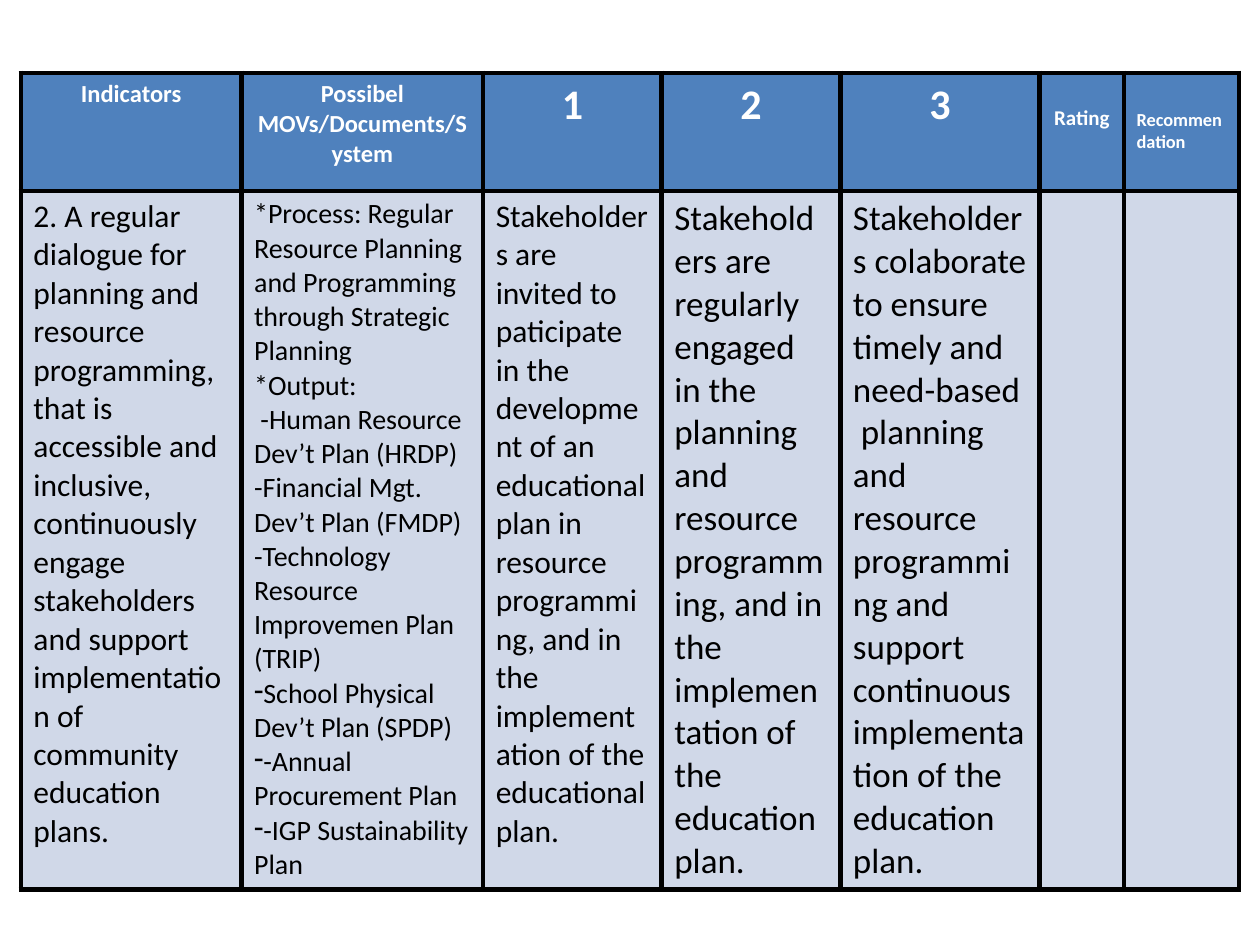
"""Build a slide with the assessment table on planning and resource programming."""
from lxml import etree
from pptx import Presentation
from pptx.dml.color import RGBColor
from pptx.enum.text import PP_ALIGN
from pptx.oxml.ns import qn
from pptx.util import Cm, Pt

LEFT, CENTER = PP_ALIGN.LEFT, PP_ALIGN.CENTER
BLACK = RGBColor(0x00, 0x00, 0x00)
WHITE = RGBColor(0xFF, 0xFF, 0xFF)
BLUE = RGBColor(0x4F, 0x81, 0xBD)
PALE_BLUE = RGBColor(0xD0, 0xD8, 0xE8)

COLUMN_WIDTHS = [4.45, 4.87, 3.6, 3.6, 4.02, 1.7, 2.32]
ROW_HEIGHTS = [2.38, 14.05]

HEADERS = [
    ("Indicators", {"size": 14}),
    ("Possibel MOVs/Documents/System", {"size": 14}),
    ("1", {"size": 24}),
    ("2", {"size": 24}),
    ("3", {"size": 24}),
    ("Rating", {"size": 12, "top": 0.65}),
    ("Recommendation", {"size": 10.5, "top": 0.73, "align": LEFT}),
]

EVIDENCE = [
    "*Process: Regular Resource Planning  and Programming through Strategic Planning",
    "*Output:",
    " -Human Resource Dev’t Plan (HRDP)",
    "-Financial Mgt. Dev’t Plan (FMDP)",
    "-Technology Resource  Improvemen Plan (TRIP)",
]
DASHED_EVIDENCE = [
    "School Physical Dev’t Plan (SPDP)",
    "-Annual Procurement Plan",
    "-IGP Sustainability Plan",
]

DETAILS = [
    (["2. A regular dialogue for planning and resource programming, that is "
      "accessible and inclusive, continuously engage stakeholders  and support "
      "implementation of community education plans."], 18),
    (EVIDENCE, 16),
    (["Stakeholders are invited to paticipate in the development of an "
      "educational plan in resource programming, and in the implementation of "
      "the educational plan."], 18),
    (["Stakeholders are regularly engaged in the planning and resource "
      "programming, and in the implementation of the education plan."], 20),
    (["Stakeholders colaborate to ensure timely and need-based  planning and "
      "resource programming and support continuous implementation of the "
      "education plan."], 20),
    ([], 18),
    ([], 18),
]


def write_text(para, text, size=18, color=BLACK, bold=False, align=LEFT,
               bullet=None, font="Calibri"):
    """Write one formatted span into a paragraph."""
    para.alignment = align
    span = para.add_run()
    span.text = text
    span.font.name = font
    span.font.size = Pt(size)
    span.font.bold = bold
    span.font.color.rgb = color
    if bullet:
        properties = para._p.get_or_add_pPr()
        properties.set("marL", "0")
        properties.set("indent", "0")
        etree.SubElement(properties, qn("a:buChar"), char=bullet)


class Page:
    """Hold the table style and the current slide."""

    border_color = BLACK
    border_width = Pt(3)

    def __init__(self, deck):
        """Add a blank slide to the deck."""
        self.slide = deck.slides.add_slide(deck.slide_layouts[6])

    def table(self, left, top, widths, heights):
        """Add a plain table with the given column widths and row heights."""
        frame = self.slide.shapes.add_table(
            len(heights), len(widths), Cm(left), Cm(top),
            Cm(sum(widths)), Cm(sum(heights)))
        table = frame.table
        table.horz_banding = False
        for column, width in zip(table.columns, widths):
            column.width = Cm(width)
        for row, height in zip(table.rows, heights):
            row.height = Cm(height)
        return table

    def cell(self, cell, fill):
        """Give a cell its borders and fill."""
        properties = cell._tc.get_or_add_tcPr()
        for side in ("L", "R", "T", "B"):
            line = etree.SubElement(properties, qn(f"a:ln{side}"),
                                    w=str(self.border_width))
            solid = etree.SubElement(line, qn("a:solidFill"))
            etree.SubElement(solid, qn("a:srgbClr"), val=str(self.border_color))
        cell.fill.solid()
        cell.fill.fore_color.rgb = fill

    def header(self, cell, text, size, top=0.13, align=CENTER):
        """Fill a header cell with white bold text."""
        self.cell(cell, BLUE)
        cell.margin_top = Cm(top)
        write_text(cell.text_frame.paragraphs[0], text, size=size,
                   color=WHITE, bold=True, align=align)

    def detail(self, cell, lines, size, dashed=()):
        """Fill a body cell with plain lines, then dashed ones."""
        self.cell(cell, PALE_BLUE)
        frame = cell.text_frame
        entries = [(text, None) for text in lines] + [(text, "-") for text in dashed]
        for index, (text, bullet) in enumerate(entries):
            para = frame.add_paragraph() if index else frame.paragraphs[0]
            write_text(para, text, size=size, bullet=bullet)


def main():
    """Build and save the deck."""
    deck = Presentation()
    deck.slide_width, deck.slide_height = Cm(25.4), Cm(19.05)
    page = Page(deck)
    table = page.table(0.42, 1.47, COLUMN_WIDTHS, ROW_HEIGHTS)
    for column, (text, style) in enumerate(HEADERS):
        page.header(table.cell(0, column), text, **style)
    for column, (lines, size) in enumerate(DETAILS):
        dashed = DASHED_EVIDENCE if lines is EVIDENCE else ()
        page.detail(table.cell(1, column), lines, size, dashed)
    deck.save("out.pptx")


if __name__ == "__main__":
    main()
